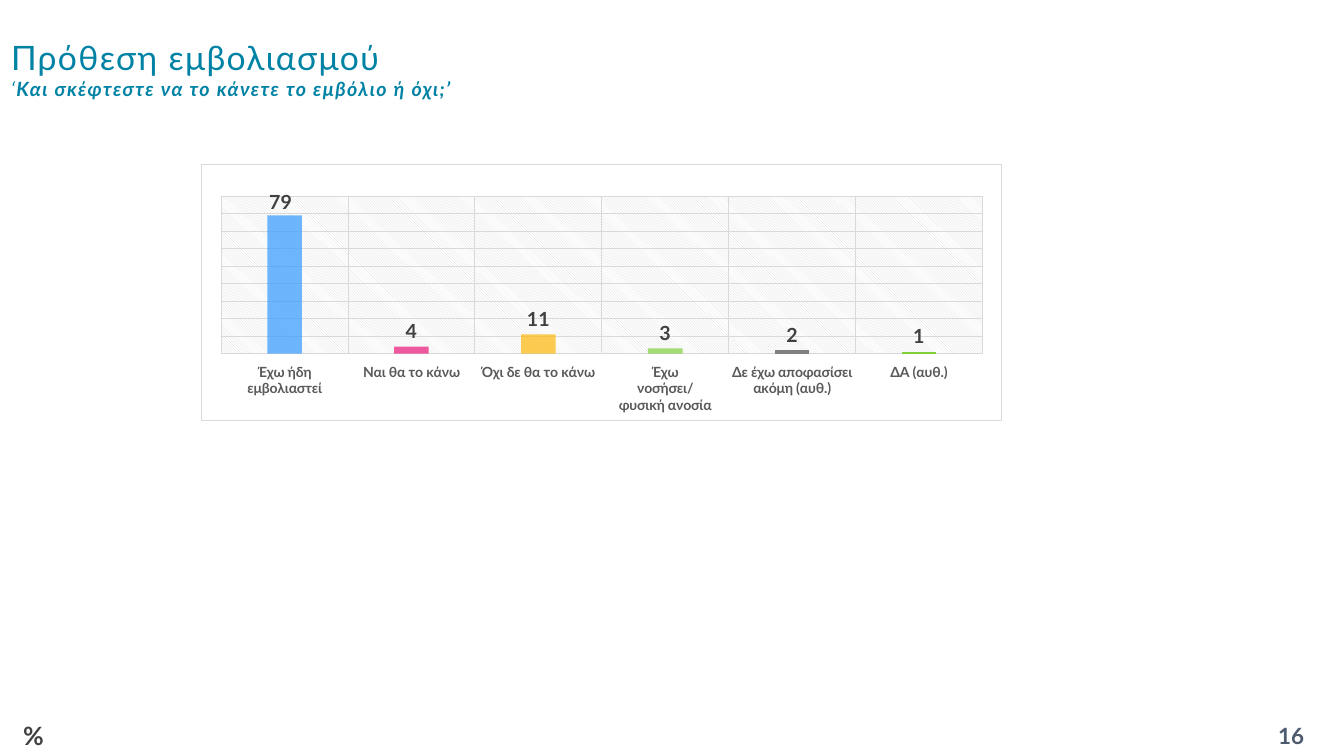
from lxml.etree import SubElement
from pptx import Presentation
from pptx.chart.data import CategoryChartData
from pptx.dml.color import RGBColor
from pptx.enum.chart import XL_CHART_TYPE, XL_LABEL_POSITION, XL_TICK_LABEL_POSITION, XL_TICK_MARK
from pptx.enum.text import MSO_ANCHOR, PP_ALIGN
from pptx.oxml import parse_xml
from pptx.oxml.ns import nsdecls, qn
from pptx.util import Inches, Pt

TEAL = RGBColor(0x00, 0x82, 0xA5)
SLATE = RGBColor(0x4E, 0x5B, 0x6F)
DARK = RGBColor(0x40, 0x40, 0x40)
TEXT = RGBColor(0x59, 0x59, 0x59)
PALE = RGBColor(0xD9, 0xD9, 0xD9)
WHITE = RGBColor(0xFF, 0xFF, 0xFF)
BLUE = RGBColor(0x33, 0x99, 0xFF)
PINK = RGBColor(0xEA, 0x15, 0x7A)
GOLD = RGBColor(0xFE, 0xB8, 0x0A)
GREEN = RGBColor(0x7F, 0xD1, 0x3B)
GRAY = RGBColor(0x80, 0x80, 0x80)
FACE = "Lato"
WIDE, HIGH = 13.33, 7.5

BARS = [
    ("Έχω ήδη εμβολιαστεί", 79, BLUE, 70),
    ("Ναι θα το κάνω", 4, PINK, 70),
    ("Όχι δε θα το κάνω", 11, GOLD, 70),
    ("Έχω νοσήσει/φυσική ανοσία", 3, GREEN, 70),
    ("Δε έχω αποφασίσει ακόμη (αυθ.)", 2, GRAY, 100),
    ("ΔΑ (αυθ.)", 1, GREEN, 100),
]


def style(font, size, color, bold=False, italic=False):
    font.name, font.size = FACE, Pt(size)
    font.bold, font.italic = bold, italic
    font.color.rgb = color


def write(para, text, size, color, bold=False, italic=False, space=0):
    run = para.add_run()
    run.text = text
    style(run.font, size, color, bold, italic)
    if space:
        run.font._element.set("spc", str(space * 100))


def place(shape, box):
    shape.left, shape.top, shape.width, shape.height = map(Inches, box)


def title(slide, box):
    head = slide.shapes.title
    place(head, box)
    frame = head.text_frame
    frame.word_wrap = True
    frame.vertical_anchor = MSO_ANCHOR.MIDDLE
    para = frame.paragraphs[0]
    para.alignment = PP_ALIGN.LEFT
    para.line_spacing = 1.0
    write(para, "Πρόθεση εμβολιασμού", 24, TEAL, space=1)
    para.add_line_break()
    write(para, "‘", 14, TEAL, italic=True, space=1)
    write(para, "Και σκέφτεστε να το κάνετε το εμβόλιο ή όχι;’", 14, TEAL,
          bold=True, italic=True, space=1)


def label(slide, box, text, size, color, align):
    frame = slide.shapes.add_textbox(*map(Inches, box)).text_frame
    frame.word_wrap = True
    frame.vertical_anchor = MSO_ANCHOR.MIDDLE
    frame.paragraphs[0].alignment = align
    write(frame.paragraphs[0], text, size, color, bold=True)


def rule(line):
    line.color.rgb = PALE
    line.width = Pt(0.75)


def layout(**parts):
    node = parse_xml(f'<c:layout {nsdecls("c")}><c:manualLayout/></c:layout>')
    for name, val in parts.items():
        SubElement(node[0], qn(f"c:{name}")).set("val", str(val))
    return node


def frame_chart(chart):
    root = chart.element
    area = root.find(qn("c:chart")).find(qn("c:plotArea"))
    for old in area.findall(qn("c:layout")):
        area.remove(old)
    area.insert(0, layout(layoutTarget="inner", xMode="edge", yMode="edge",
                          x=0.025, y=0.123, w=0.951, h=0.615))
    area.append(parse_xml(
        f'<c:spPr {nsdecls("c", "a")}><a:pattFill prst="ltDnDiag">'
        f'<a:fgClr><a:srgbClr val="{PALE}"/></a:fgClr>'
        f'<a:bgClr><a:srgbClr val="{WHITE}"/></a:bgClr>'
        '</a:pattFill><a:ln><a:noFill/></a:ln></c:spPr>'))
    root.find(qn("c:chart")).addnext(parse_xml(
        f'<c:spPr {nsdecls("c", "a")}><a:solidFill><a:srgbClr val="{WHITE}"/>'
        f'</a:solidFill><a:ln w="{Pt(0.75)}"><a:solidFill>'
        f'<a:srgbClr val="{PALE}"/></a:solidFill></a:ln></c:spPr>'))


def axes(chart):
    cat, val = chart.category_axis, chart.value_axis
    for axis in (cat, val):
        axis.has_major_gridlines = True
        rule(axis.major_gridlines.format.line)
        axis.major_tick_mark = axis.minor_tick_mark = XL_TICK_MARK.NONE
    rule(cat.format.line)
    cat.tick_label_position = XL_TICK_LABEL_POSITION.LOW
    style(cat.tick_labels.font, 10, TEXT, bold=True)
    val.minimum_scale, val.maximum_scale, val.major_unit = 0, 90, 10
    val.visible = False


def bars(plot):
    plot.gap_width, plot.overlap = 267, -43
    plot.vary_by_categories = False
    series = plot.series[0]
    series.format.fill.solid()
    series.format.fill.fore_color.rgb = GREEN
    tags = series.data_labels
    tags.show_value = True
    tags.number_format, tags.number_format_is_linked = "0", False
    tags.position = XL_LABEL_POSITION.OUTSIDE_END
    style(tags.font, 14, DARK, bold=True)
    for i, (name, count, color, solid) in enumerate(BARS):
        fill = series.points[i].format.fill
        fill.solid()
        fill.fore_color.rgb = color
        if solid < 100:
            tint = next(fill._xPr.iter(qn("a:srgbClr")))
            SubElement(tint, qn("a:alpha")).set("val", str(solid * 1000))
    first = series.points[0].data_label
    style(first.font, 14, DARK, bold=True)
    first.position = XL_LABEL_POSITION.OUTSIDE_END
    node = next(series._element.iter(qn("c:dLbl")))
    node.insert(1, layout(x=-0.005, y=0.01))


def graph(slide, box):
    data = CategoryChartData(number_format="0")
    data.categories = [bar[0] for bar in BARS]
    data.add_series("Series 1", [bar[1] for bar in BARS])
    chart = slide.shapes.add_chart(
        XL_CHART_TYPE.COLUMN_CLUSTERED, *map(Inches, box), data).chart
    chart.has_legend = chart.has_title = False
    chart.font.name, chart.font.size = FACE, Pt(10)
    axes(chart)
    bars(chart.plots[0])
    frame_chart(chart)


def main():
    deck = Presentation()
    deck.slide_width, deck.slide_height = Inches(WIDE), Inches(HIGH)
    slide = deck.slides.add_slide(deck.slide_layouts[5])
    foot = 0.4
    title(slide, (0.01, 0.09, 9.92, 1.18))
    label(slide, (WIDE - 1.05, HIGH - foot, 1.05, foot), "16", 16, SLATE, PP_ALIGN.CENTER)
    label(slide, (0.13, HIGH - foot, 0.71, foot), "%", 18, DARK, PP_ALIGN.LEFT)
    graph(slide, (1.99, 1.63, 7.95, 2.55))
    deck.save("out.pptx")


if __name__ == "__main__":
    main()
